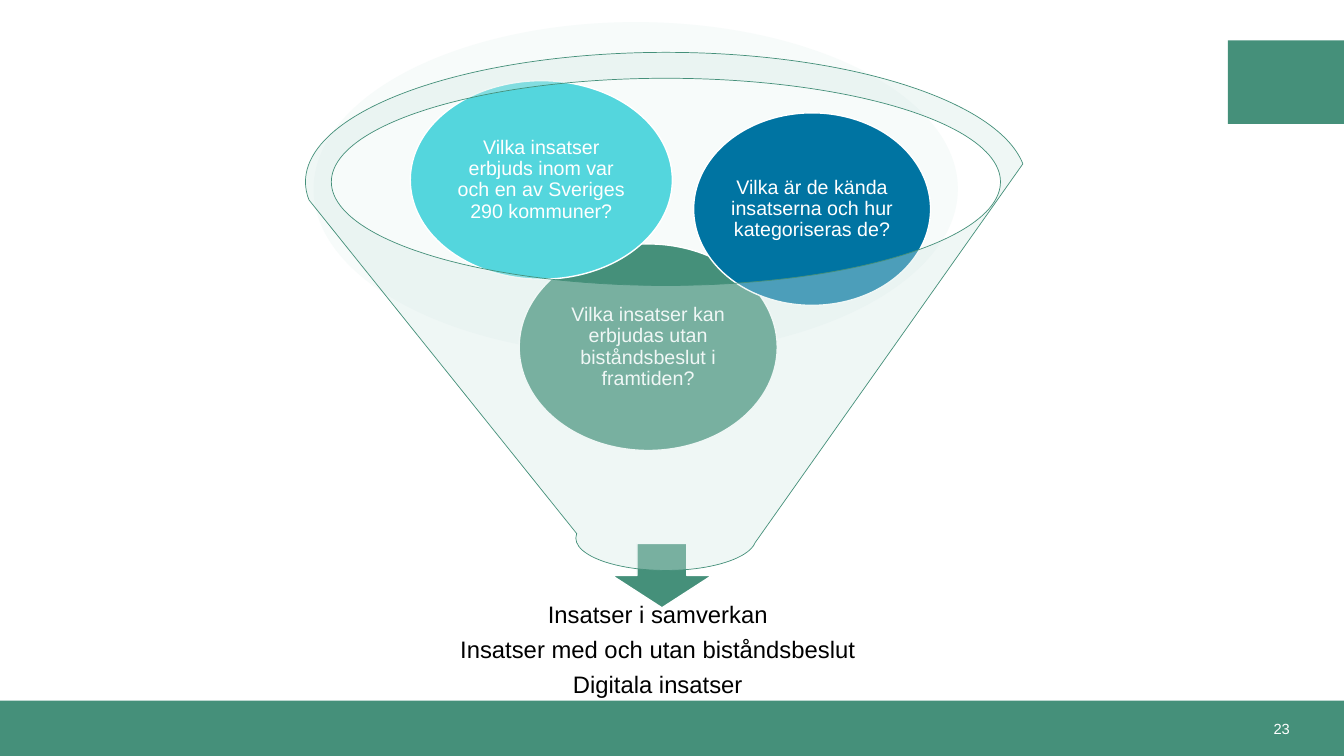
import pptx
import pptx.util
import pptx.dml.color
import pptx.enum.shapes
import pptx.enum.text
import pptx.oxml.ns
import lxml.etree

Inches = pptx.util.Inches
Pt = pptx.util.Pt
Kind = pptx.enum.shapes.MSO_SHAPE
Align = pptx.enum.text.PP_ALIGN
hue = pptx.dml.color.RGBColor.from_string

GREEN, WHITE, BLACK = "45907A", "FFFFFF", "000000"

deck = pptx.Presentation()
deck.slide_width = Inches(13.33)
deck.slide_height = Inches(7.5)
slide = deck.slides.add_slide(deck.slide_layouts[6])
col = deck.slide_width / 100
row = deck.slide_height / 100


def draw(kind, x, y, w, h, fill, line=None, width=1, alpha=100):
    box = [int(n) for n in (x * col, y * row, w * col, h * row)]
    shape = slide.shapes.add_shape(kind, *box)
    shape.shadow.inherit = False
    shape.fill.solid()
    shape.fill.fore_color.rgb = hue(fill)
    if alpha < 100:
        tint = shape.fill._xPr.find(".//" + pptx.oxml.ns.qn("a:srgbClr"))
        lxml.etree.SubElement(tint, pptx.oxml.ns.qn("a:alpha"), val=str(alpha * 1000))
    if line:
        shape.line.color.rgb = hue(line)
        shape.line.width = Pt(width)
    else:
        shape.line.fill.background()
    return shape


def write(shape, lines, size, color, align, inset, lead=1, after=0):
    frame = shape.text_frame
    frame.word_wrap = True
    frame.vertical_anchor = pptx.enum.text.MSO_ANCHOR.MIDDLE
    frame.margin_left = frame.margin_right = Inches(inset)
    frame.margin_top = frame.margin_bottom = Inches(min(inset, 0.13))
    frame.text = "\n".join(lines)
    for para in frame.paragraphs:
        para.alignment = align
        para.line_spacing = lead
        para.space_after = Pt(after)
        para.font.name = "Arial"
        para.font.size = Pt(size)
        para.font.color.rgb = hue(color)


draw(Kind.RECTANGLE, 91.36, 5.33, 8.64, 11.07, GREEN)
draw(Kind.RECTANGLE, 0, 92.67, 100, 7.33, GREEN)
draw(Kind.OVAL, 23.33, 2.93, 47.94, 44.13, "EBF5F3", alpha=40)
draw(Kind.DOWN_ARROW, 45.54, 71.87, 7.43, 8.53, GREEN, WHITE)

goals = slide.shapes.add_textbox(
    int(31.06 * col), int(78.13 * row), int(35.78 * col), int(15.87 * row))
write(goals, [
    "Insatser i samverkan",
    "Insatser med och utan biståndsbeslut",
    "Digitala insatser",
], 17, BLACK, Align.CENTER, 0.13, 0.9, 6.7)

balls = [
    (38.63, 32.27, 19.2, 27.33, GREEN,
     "Vilka insatser kan erbjudas utan biståndsbeslut i framtiden?"),
    (30.53, 10.67, 19.5, 26.27, "54D6DD",
     "Vilka insatser erbjuds inom var och en av Sveriges 290 kommuner?"),
    (51.61, 14.93, 17.63, 25.47, "0074A2",
     "Vilka är de kända insatserna och hur kategoriseras de?"),
]
for x, y, w, h, fill, text in balls:
    ball = draw(Kind.OVAL, x, y, w, h, fill, WHITE)
    write(ball, [text], 14, WHITE, Align.CENTER, 0.02, 0.9)

draw(Kind.FUNNEL, 22.73, 6.93, 53.64, 68.53, "D5EAE6", GREEN, 0.5, 36)

page = slide.shapes.add_textbox(
    int(70.67 * col), int(92.67 * row), int(26.03 * col), int(7.33 * row))
write(page, ["23"], 10.5, WHITE, Align.RIGHT, 0.1)

deck.save("out.pptx")
